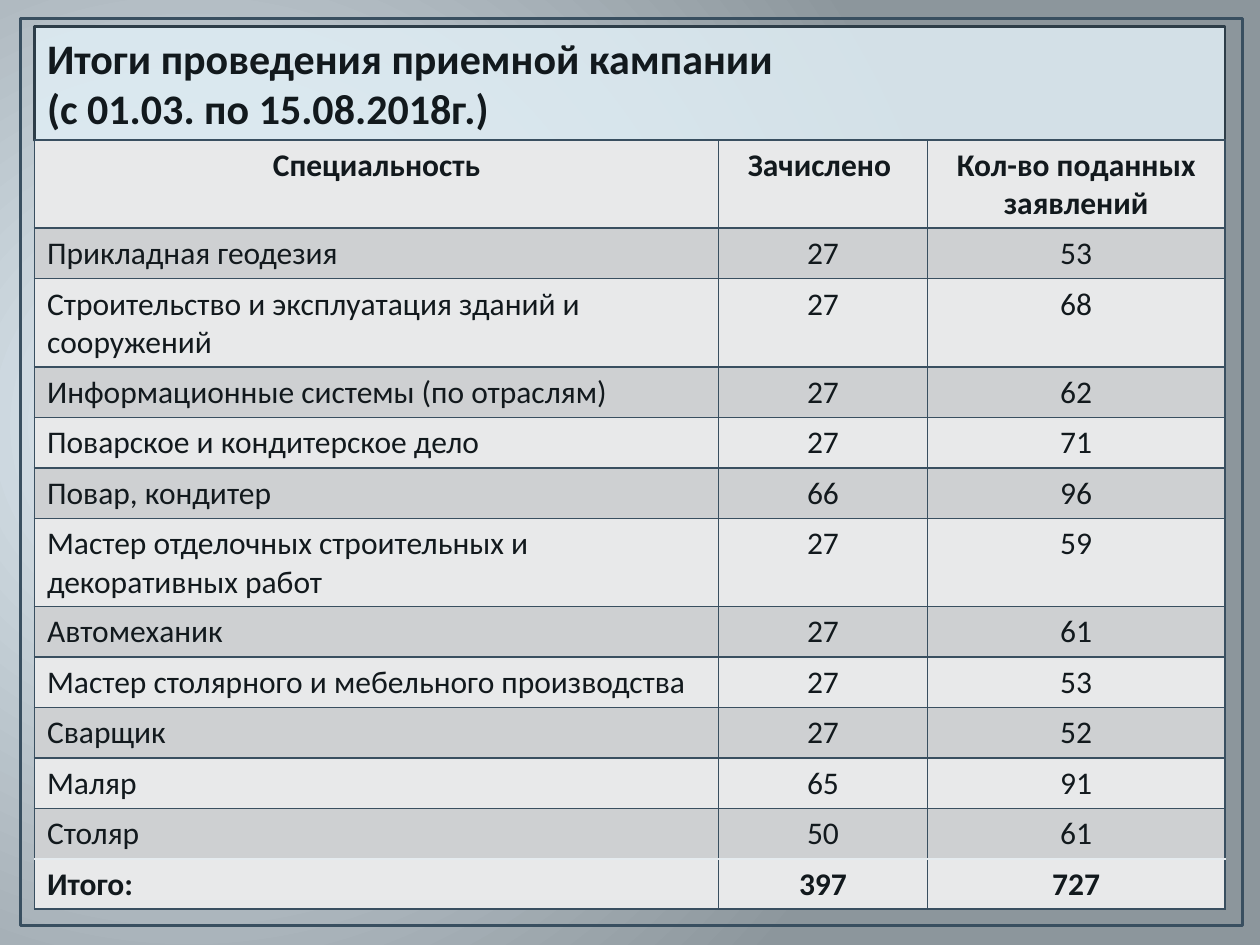
import pptx
import pptx.dml.color
import pptx.enum.shapes
import pptx.enum.text
import pptx.oxml.ns
import pptx.util
from lxml import etree

Pt = pptx.util.Pt
qn = pptx.oxml.ns.qn
ALIGN = pptx.enum.text.PP_ALIGN
TEXT, BORDER, TOTAL_BORDER = "12191D", "394F60", "E5EBEF"
LIGHT, DARK = "E8E9EA", "CED0D2"


def color(value):
    return pptx.dml.color.RGBColor.from_string(value)


def add_border(cell, side, value):
    properties = cell._tc.get_or_add_tcPr()
    line = etree.SubElement(properties, qn(f"a:ln{side}"), w=str(Pt(1)))
    fill = etree.SubElement(line, qn("a:solidFill"))
    etree.SubElement(fill, qn("a:srgbClr"), val=value)


presentation = pptx.Presentation()
presentation.slide_width, presentation.slide_height = Pt(720), Pt(540)
slide = presentation.slides.add_slide(presentation.slide_layouts[5])

# Background: circular gradient
background = slide.background.fill
background.gradient()
for stop, position, value in zip(background.gradient_stops, (0, 1), ("E1ECF4", "8C969C")):
    stop.position = position
    stop.color.rgb = color(value)
gradient = slide.element.find(".//" + qn("a:gradFill"))
gradient.remove(gradient.find(qn("a:lin")))
circle = etree.SubElement(gradient, qn("a:path"), {"path": "circle"})
etree.SubElement(circle, qn("a:fillToRect"), l="15000", t="50000", r="85000", b="60000")

# Frame
frame = slide.shapes.add_shape(
    pptx.enum.shapes.MSO_SHAPE.RECTANGLE, Pt(11.7), Pt(10.5), Pt(698.4), Pt(518.4))
frame.shadow.inherit = False
frame.fill.background()
frame.line.color.rgb = color(BORDER)
frame.line.width = Pt(1.5)

# Title
title = slide.shapes.title
title.left, title.top, title.width, title.height = Pt(19.7), Pt(15), Pt(680.4), Pt(65.4)
title.fill.solid()
title.fill.fore_color.rgb = color("E0EEF5")
title_color = title.element.spPr.find(qn("a:solidFill"))[0]
etree.SubElement(title_color, qn("a:alpha"), val="85000")
title.line.color.rgb = color("2D3D48")
title.line.width = Pt(1.5)
title.text_frame.text = "Итоги проведения приемной кампании\n(с 01.03. по 15.08.2018г.)"
title.text_frame.auto_size = pptx.enum.text.MSO_AUTO_SIZE.SHAPE_TO_FIT_TEXT
title.text_frame.vertical_anchor = pptx.enum.text.MSO_ANCHOR.TOP
for paragraph in title.text_frame.paragraphs:
    paragraph.alignment = ALIGN.LEFT
    paragraph.font.name = "Calibri"
    paragraph.font.size = Pt(24)
    paragraph.font.bold = True
    paragraph.font.color.rgb = color(TEXT)

# Admission table
rows = [
    ("Специальность", "Зачислено ", "Кол-во поданных заявлений"),
    ("Прикладная геодезия", 27, 53),
    ("Строительство и эксплуатация зданий и сооружений", 27, 68),
    ("Информационные системы (по отраслям)", 27, 62),
    ("Поварское и кондитерское дело", 27, 71),
    ("Повар, кондитер", 66, 96),
    ("Мастер отделочных строительных и декоративных работ", 27, 59),
    ("Автомеханик", 27, 61),
    ("Мастер столярного и мебельного производства", 27, 53),
    ("Сварщик", 27, 52),
    ("Маляр", 65, 91),
    ("Столяр", 50, 61),
    ("Итого:", 397, 727),
]
two_line_rows = (0, 2, 6)
last = len(rows) - 1
table = slide.shapes.add_table(
    len(rows), 3, Pt(19.7), Pt(80), Pt(680.4), Pt(439.2)).table
for column, width in zip(table.columns, (391, 119.2, 170.2)):
    column.width = Pt(width)

for row_index, values in enumerate(rows):
    table.rows[row_index].height = Pt(50.4 if row_index in two_line_rows else 28.8)
    for column_index, value in enumerate(values):
        cell = table.cell(row_index, column_index)
        # The line above the total row is pale
        for side in "LRTB":
            above_total = (row_index, side) in ((last - 1, "B"), (last, "T"))
            add_border(cell, side, TOTAL_BORDER if above_total else BORDER)
        cell.fill.solid()
        cell.fill.fore_color.rgb = color(DARK if row_index % 2 else LIGHT)
        cell.text = str(value)
        paragraph = cell.text_frame.paragraphs[0]
        centered = row_index == 0 or column_index > 0
        paragraph.alignment = ALIGN.CENTER if centered else ALIGN.LEFT
        paragraph.font.name = "Calibri"
        paragraph.font.size = Pt(18)
        paragraph.font.bold = row_index in (0, last)
        paragraph.font.color.rgb = color(TEXT)

presentation.save("out.pptx")
